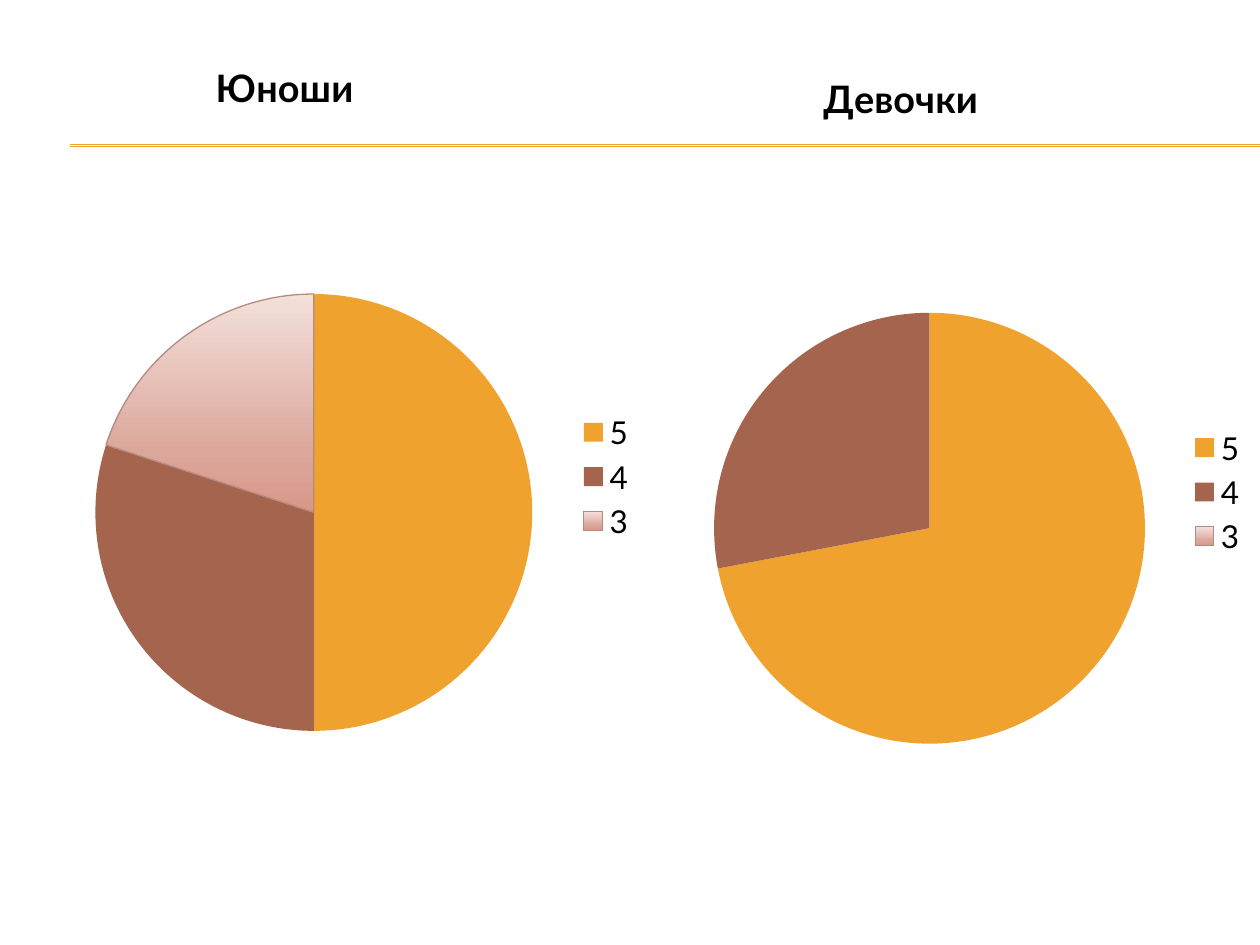
from copy import deepcopy
from dataclasses import dataclass

from pptx import Presentation
from pptx.chart.data import CategoryChartData
from pptx.dml.color import RGBColor
from pptx.enum.chart import XL_CHART_TYPE, XL_LEGEND_POSITION
from pptx.enum.shapes import MSO_CONNECTOR
from pptx.oxml import parse_xml
from pptx.oxml.ns import nsdecls, qn
from pptx.util import Cm, Pt

PIE = XL_CHART_TYPE.PIE
RIGHT = XL_LEGEND_POSITION.RIGHT
STRAIGHT = MSO_CONNECTOR.STRAIGHT


@dataclass(frozen=True)
class Theme:
    font: str = "Lato"
    text: str = "000000"
    gold: str = "F0A22E"
    brown: str = "A5644E"
    edge: str = "B58B80"
    fade: tuple = ((0, "F3E0DB"), (0.72, "DCA79B"), (1, "D89787"))
    body: float = 18
    head: float = 21.6
    rule: float = 0.75


theme = Theme()
rgb = RGBColor.from_string


def style(font, size, bold=False):
    font.name = theme.font
    font.size = Pt(size)
    font.bold = bold
    font.color.rgb = rgb(theme.text)


def place(plot, **sides):
    """Fix the inner plot area, in fractions of the chart."""
    for old in plot.findall(qn("c:layout")):
        plot.remove(old)
    modes = "".join(f'<c:{side}Mode val="edge"/>' for side in "xy")
    sizes = "".join(f'<c:{side} val="{part}"/>' for side, part in sides.items())
    plot.insert(0, parse_xml(
        f'<c:layout {nsdecls("c")}><c:manualLayout>'
        f'<c:layoutTarget val="inner"/>{modes}{sizes}'
        '</c:manualLayout></c:layout>'))


deck = Presentation()
deck.slide_width, deck.slide_height = Cm(25.4), Cm(19.05)
slide = deck.slides.add_slide(deck.slide_layouts[6])

# Double rule under the headings
for top in (2.92, 2.95):
    rule = slide.shapes.add_connector(STRAIGHT, Cm(1.42), Cm(top), Cm(25.4), Cm(top))
    rule.line.color.rgb = rgb(theme.gold)
    rule.line.width = Pt(theme.rule)
    rule.element.spPr.append(parse_xml(f'<a:effectLst {nsdecls("a")}/>'))

# One pie of grades for each group
groups = [
    ("Юноши", (50, 30, 20), (-1.6, 0.58, 14.68, 18.06)),
    ("Девочки", (72, 28, None), (10.92, 0.79, 14.48, 18.26)),
]
for name, shares, box in groups:
    data = CategoryChartData()
    data.categories = ["5", "4", "3"]
    data.add_series(name, shares)
    chart = slide.shapes.add_chart(PIE, *map(Cm, box), data).chart
    style(chart.font, theme.body)

    chart.has_title = True
    head = chart.chart_title.text_frame.paragraphs[0]
    head.text = name
    style(head.font, theme.head, bold=True)
    chart.chart_title.include_in_layout = True

    chart.has_legend = True
    chart.legend.position = RIGHT
    chart.legend.include_in_layout = True
    style(chart.legend.font, theme.body)

    pie = chart.plots[0]
    pie.vary_by_categories = True
    points = pie.series[0].points
    for index, color in enumerate((theme.gold, theme.brown)):
        fill = points[index].format.fill
        fill.solid()
        fill.fore_color.rgb = rgb(color)

    last = points[2].format
    last.line.color.rgb = rgb(theme.edge)
    last.line.width = Pt(theme.rule)
    last.fill.gradient()
    last.fill.gradient_angle = 270
    stops = next(chart.element.iter(qn("a:gsLst")))
    stops.append(deepcopy(stops[-1]))
    for stop, (spot, color) in zip(last.fill.gradient_stops, theme.fade):
        stop.position = spot
        stop.color.rgb = rgb(color)

    place(next(chart.element.iter(qn("c:plotArea"))), x=0.24, y=0.12, w=0.6, h=0.84)

deck.save("out.pptx")
